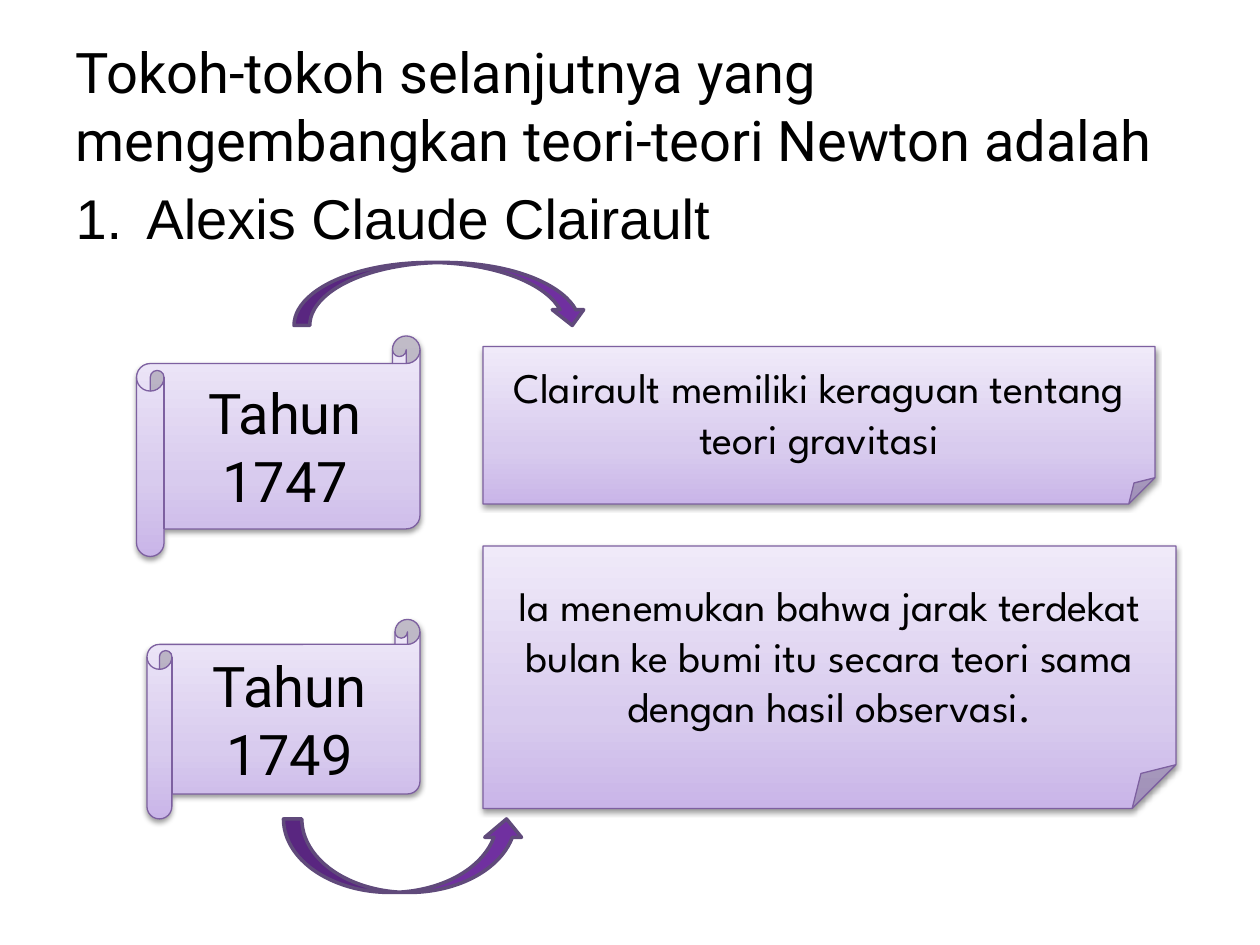
from copy import deepcopy
from lxml import etree
from pptx import Presentation
from pptx.dml.color import RGBColor
from pptx.enum import shapes, text
from pptx.oxml import parse_xml
from pptx.oxml.ns import nsdecls, qn
from pptx.util import Pt

BLACK = RGBColor(0x00, 0x00, 0x00)
PURPLE = RGBColor(0x70, 0x30, 0xA0)
ARROW_LINE = RGBColor(0x60, 0x4A, 0x7B)
CARD_LINE = RGBColor(0x7D, 0x60, 0xA0)
CARD_STOPS = [
    (0, RGBColor(0xC9, 0xB5, 0xE8)),
    (0.35, RGBColor(0xD8, 0xCB, 0xEE)),
    (1, RGBColor(0xF0, 0xEA, 0xF9)),
]
SHADOW = (
    f'<a:outerShdw {nsdecls("a")} blurRad="40000" dist="20000" dir="5400000" '
    'rotWithShape="0"><a:srgbClr val="000000"><a:alpha val="38000"/>'
    '</a:srgbClr></a:outerShdw>'
)
SHAPE = shapes.MSO_SHAPE


def add_run(p, words, font, size):
    r = p.add_run()
    r.text = words
    r.font.name = font
    r.font.size = Pt(size)
    r.font.color.rgb = BLACK


def add_shape(s, kind, box, line, width):
    sp = s.shapes.add_shape(kind, *[Pt(v) for v in box])
    sp.shadow.inherit = False
    sp.line.color.rgb = line
    sp.line.width = Pt(width)
    return sp


prs = Presentation()
prs.slide_width, prs.slide_height = Pt(720), Pt(540)
s = prs.slides.add_slide(prs.slide_layouts[1])
title = s.shapes.title.element
title.getparent().remove(title)

body = s.placeholders[1]
body.left, body.top, body.width, body.height = Pt(36), Pt(18), Pt(648), Pt(464.4)
tf = body.text_frame
tf.auto_size = text.MSO_AUTO_SIZE.NONE
p = tf.paragraphs[0]
add_run(p, "Tokoh-tokoh selanjutnya yang mengembangkan teori-teori Newton adalah", "Roboto", 32)
pPr = p._p.get_or_add_pPr()
pPr.set("marL", "0")
pPr.set("indent", "0")
etree.SubElement(pPr, qn("a:buNone"))

p = tf.add_paragraph()
add_run(p, "Alexis Claude Clairault", "Arial", 32)
pPr = p._p.get_or_add_pPr()
pPr.set("marL", str(Pt(40.5)))
pPr.set("indent", str(-Pt(40.5)))
etree.SubElement(pPr, qn("a:buFont"), typeface="Arial")
etree.SubElement(pPr, qn("a:buAutoNum"), type="arabicPeriod")

cards = [
    (SHAPE.HORIZONTAL_SCROLL, (78, 192, 162, 126), "Tahun 1747", "Roboto", 32),
    (SHAPE.FOLDED_CORNER, (276, 198, 384, 90),
     "Clairault memiliki keraguan tentang teori gravitasi", "League Spartan", 24),
    (SHAPE.FOLDED_CORNER, (276, 312, 396, 150),
     "Ia menemukan bahwa jarak terdekat bulan ke bumi itu secara teori sama "
     "dengan hasil observasi.", "League Spartan", 24),
    (SHAPE.HORIZONTAL_SCROLL, (84, 354, 156, 114), "Tahun 1749", "Roboto", 32),
]
for kind, box, words, font, size in cards:
    sp = add_shape(s, kind, box, CARD_LINE, 0.75)
    sp.fill.gradient()
    sp.fill.gradient_angle = 90
    stop_list = sp.element.spPr.find(".//" + qn("a:gsLst"))
    stop_list.append(deepcopy(stop_list[0]))
    for stop, (position, color) in zip(sp.fill.gradient_stops, CARD_STOPS):
        stop.position = position
        stop.color.rgb = color
    sp.element.spPr.find(qn("a:effectLst")).append(parse_xml(SHADOW))
    tf = sp.text_frame
    tf.word_wrap = True
    tf.vertical_anchor = text.MSO_ANCHOR.MIDDLE
    p = tf.paragraphs[0]
    p.alignment = text.PP_ALIGN.CENTER
    add_run(p, words, font, size)

arrows = [
    (SHAPE.CURVED_UP_ARROW, (162, 468, 138, 42)),
    (SHAPE.CURVED_DOWN_ARROW, (168, 150, 168, 36)),
]
for kind, box in arrows:
    sp = add_shape(s, kind, box, ARROW_LINE, 2)
    sp.fill.solid()
    sp.fill.fore_color.rgb = PURPLE

prs.save("out.pptx")
